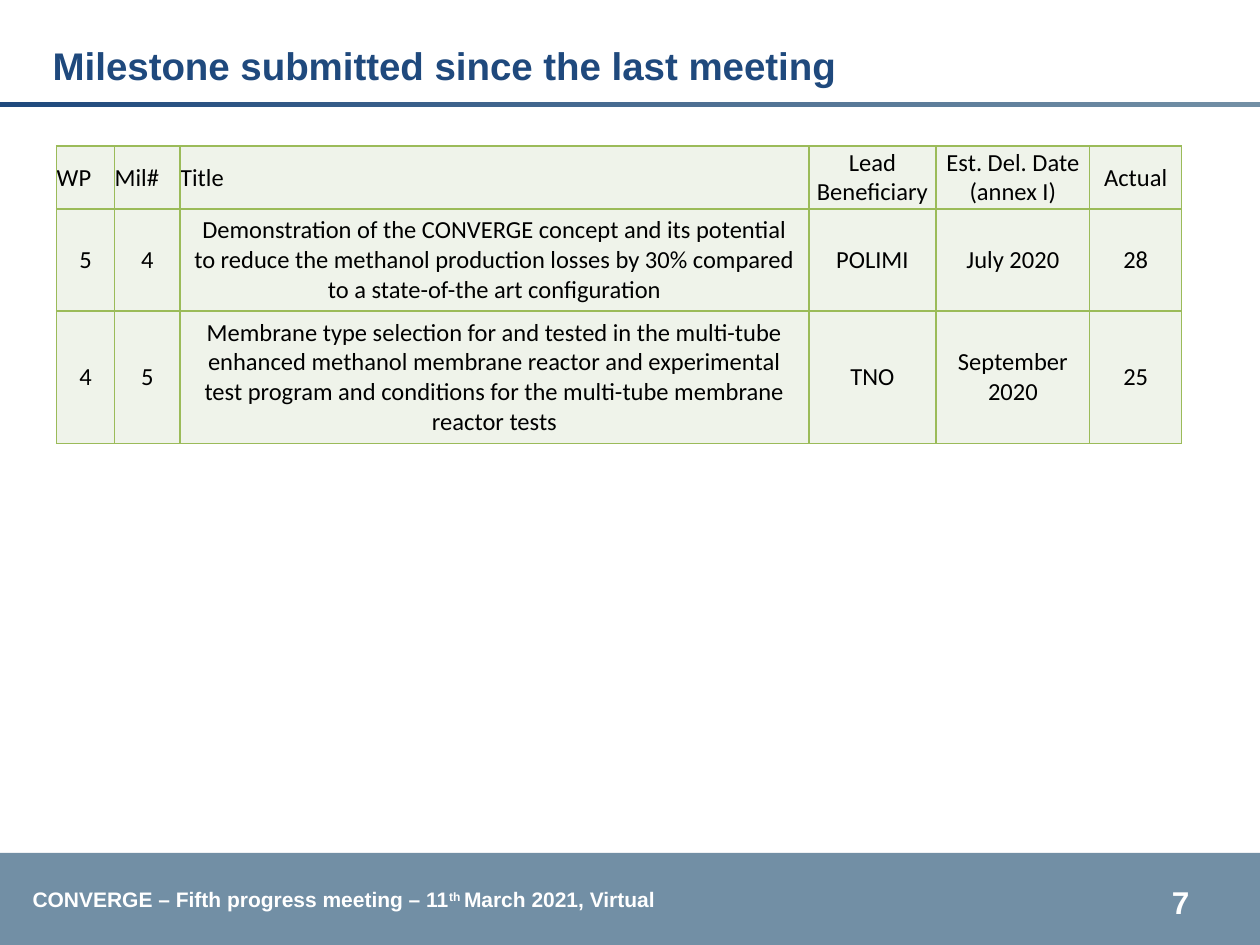
import pptx
import pptx.dml.color
import pptx.enum.shapes
import pptx.enum.text
import pptx.oxml
import pptx.oxml.ns
import pptx.util

Inches = pptx.util.Inches
Align = pptx.enum.text.PP_ALIGN
Anchor = pptx.enum.text.MSO_ANCHOR

NAVY, STEEL, WHITE, BLACK = "1F497D", "728FA5", "FFFFFF", "000000"
GREEN, PALE = "9BBB59", "EFF3EA"


def color(code):
    return pptx.dml.color.RGBColor.from_string(code)


def write(frame, text, size=14, face="Arial", tint=WHITE, bold=False,
          align=Align.LEFT, anchor=Anchor.TOP, wrap=True):
    """Fill a frame with one paragraph; text is a string or (string, baseline) pairs."""
    frame.word_wrap = wrap
    frame.vertical_anchor = anchor
    para = frame.paragraphs[0]
    para.alignment = align
    parts = [(text, 0)] if isinstance(text, str) else text
    for words, base in parts:
        run = para.add_run()
        run.text = words
        font = run.font
        font.size, font.name, font.bold = pptx.util.Pt(size), face, bold
        font.color.rgb = color(tint)
        if base:
            run._r.get_or_add_rPr().set("baseline", str(base * 1000))


class Deck:
    def __init__(self, wide, high):
        self.file = pptx.Presentation()
        self.file.slide_width, self.file.slide_height = Inches(wide), Inches(high)
        self.slide = self.file.slides.add_slide(self.file.slide_layouts[6])

    def bar(self, box, *tints):
        """Add a rectangle with a plain fill, or a gradient from left to right."""
        shape = self.slide.shapes.add_shape(
            pptx.enum.shapes.MSO_SHAPE.RECTANGLE, *map(Inches, box))
        shape.shadow.inherit = False
        shape.line.fill.background()
        if len(tints) == 1:
            shape.fill.solid()
            shape.fill.fore_color.rgb = color(tints[0])
            return
        shape.fill.gradient()
        shape.fill.gradient_angle = 0
        for stop, tint in zip(shape.fill.gradient_stops, tints):
            stop.color.rgb = color(tint)

    def text(self, box, words, **style):
        frame = self.slide.shapes.add_textbox(*map(Inches, box)).text_frame
        write(frame, words, **style)
        return frame

    def edge(self, cell):
        """Draw a thin green border on all four sides of a cell."""
        props = cell._tc.get_or_add_tcPr()
        for spot, side in enumerate("LRTB"):
            props.insert(spot, pptx.oxml.parse_xml(
                f'<a:ln{side} {pptx.oxml.ns.nsdecls("a")} w="12700"><a:solidFill>'
                f'<a:srgbClr val="{GREEN}"/></a:solidFill></a:ln{side}>'))

    def table(self, left, top, widths, heights, rows):
        grid = self.slide.shapes.add_table(
            len(rows), len(widths), Inches(left), Inches(top),
            Inches(sum(widths)), Inches(sum(heights))).table
        for col, wide in zip(grid.columns, widths):
            col.width = Inches(wide)
        for row, high in zip(grid.rows, heights):
            row.height = Inches(high)
        for r, row in enumerate(rows):
            for c, words in enumerate(row):
                cell = grid.cell(r, c)
                cell.fill.solid()
                cell.fill.fore_color.rgb = color(PALE)
                self.edge(cell)
                # Title and beneficiary keep their padding below the header
                if r == 0 or c not in (2, 3):
                    cell.margin_left = cell.margin_right = 0
                    cell.margin_top = cell.margin_bottom = 0
                head = r == 0 and c < 3
                write(cell.text_frame, words, face="Calibri", tint=BLACK,
                      align=Align.LEFT if head else Align.CENTER)
                cell.vertical_anchor = Anchor.MIDDLE


def main():
    deck = Deck(10, 7.5)

    # Footer
    deck.bar((0, 6.77, 10, 0.73), STEEL)
    deck.text((0.16, 6.99, 5.21, 0.3),
              [("CONVERGE – Fifth progress meeting – 11", 0), ("th ", 30),
               ("March 2021, Virtual", 0)], size=12, bold=True, wrap=False)
    page = deck.text((9.03, 6.96, 0.68, 0.36), "7", size=18, bold=True,
                     align=Align.CENTER)
    page.margin_left = page.margin_right = 0

    # Title and rule
    deck.bar((0, 0.81, 10, 0.04), NAVY, STEEL)
    deck.text((0.32, 0.17, 9.38, 0.58), "Milestone submitted since the last meeting",
              size=22, tint=NAVY, bold=True, anchor=Anchor.BOTTOM)

    # Milestones
    deck.table(0.45, 1.16, [0.46, 0.52, 4.99, 1.01, 1.22, 0.73], [0.5, 0.81, 1.05], [
        ["WP", "Mil#", "Title", "Lead Beneficiary", "Est. Del. Date (annex I)", "Actual"],
        ["5", "4", "Demonstration of the CONVERGE concept and its potential to reduce "
         "the methanol production losses by 30% compared to a state-of-the art "
         "configuration", "POLIMI", "July 2020", "28"],
        ["4", "5", "Membrane type selection for and tested in the multi-tube enhanced "
         "methanol membrane reactor and experimental test program and conditions for "
         "the multi-tube membrane reactor tests", "TNO", "September 2020", "25"],
    ])

    deck.file.save("out.pptx")


if __name__ == "__main__":
    main()
